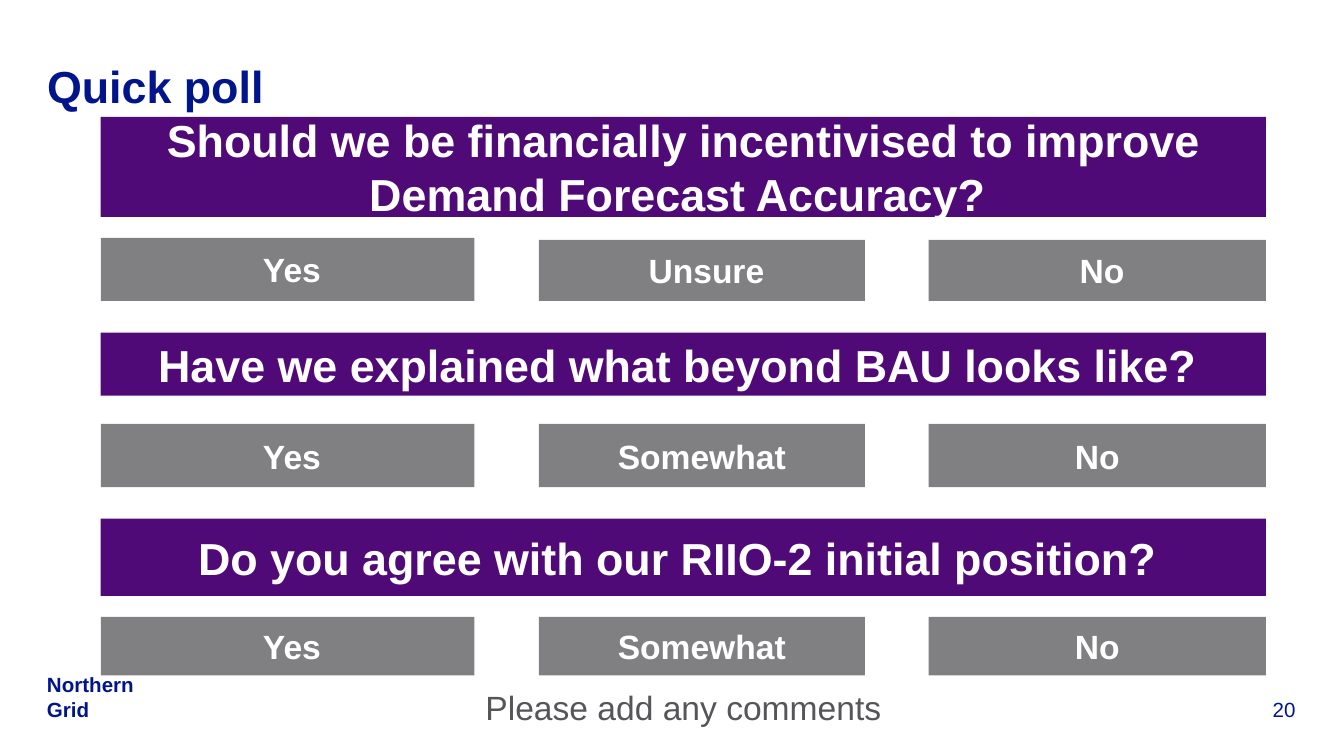
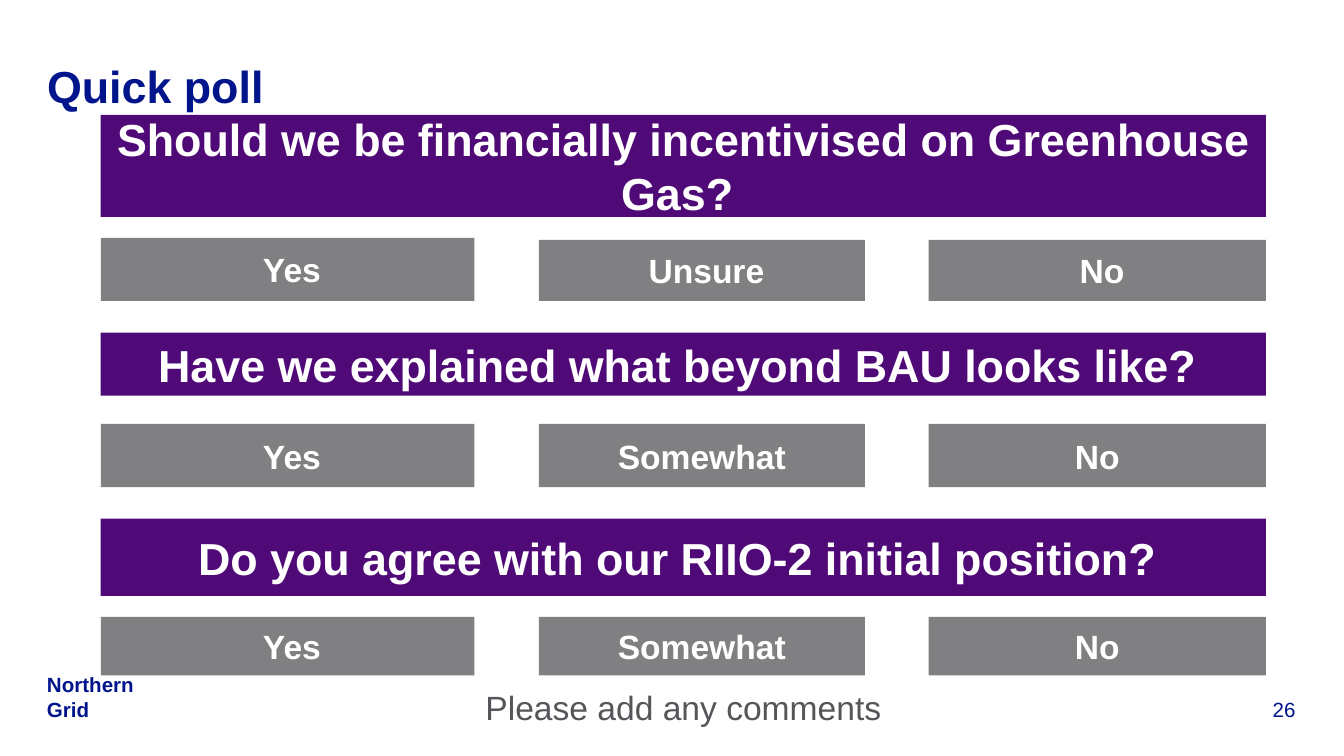
"""Build two quick-poll slides with three questions each."""
from dataclasses import dataclass

from pptx import Presentation
from pptx.dml.color import RGBColor
from pptx.enum.shapes import MSO_SHAPE as Preset
from pptx.enum.text import MSO_ANCHOR as Anchor
from pptx.enum.text import MSO_AUTO_SIZE as AutoSize
from pptx.enum.text import PP_ALIGN as Align
from pptx.slide import Slide
from pptx.text.text import TextFrame
from pptx.util import Emu, Pt

NAVY = RGBColor(0x00, 0x14, 0x8C)
PURPLE = RGBColor(0x50, 0x0A, 0x78)
GREY = RGBColor(0x80, 0x80, 0x83)
DARK_GREY = RGBColor(0x55, 0x55, 0x5A)
WHITE = RGBColor(0xFF, 0xFF, 0xFF)
FONT = "Arial"

EMU_PER_PX = 4572
PAGE_WIDTH, PAGE_HEIGHT = 2000, 1125
MARGIN = 70
BAND_LEFT, BAND_WIDTH = 150, 1734
ANSWER_COLUMNS = ((150, 556), (802, 485), (1382, 502))


@dataclass(frozen=True)
class Area:
    left: int
    top: int
    width: int
    height: int

    def emu(self) -> tuple[Emu, ...]:
        return tuple(Emu(px * EMU_PER_PX)
                     for px in (self.left, self.top, self.width, self.height))


@dataclass(frozen=True)
class Question:
    text: str
    top: int
    height: int
    answers: tuple[str, str, str]
    answer_top: int
    answer_height: int
    later_drop: int = 0


@dataclass(frozen=True)
class Poll:
    number: int
    opening: Question


OPENING_ANSWERS = (" Yes", " Unsure", " No")
USUAL_ANSWERS = (" Yes", "Somewhat", "No")

COMMON_QUESTIONS = (
    Question("Have we explained what beyond BAU looks like? ",
             495, 94, USUAL_ANSWERS, 631, 94),
    Question("Do you agree with our RIIO-2 initial position? ",
             772, 115, USUAL_ANSWERS, 918, 87),
)

POLLS = (
    Poll(20, Question(
        "Should we be financially incentivised to improve Demand Forecast Accuracy? ",
        174, 149, OPENING_ANSWERS, 354, 94, later_drop=3)),
    Poll(26, Question(
        "Should we be financially incentivised on Greenhouse Gas? ",
        171, 152, OPENING_ANSWERS, 354, 94, later_drop=3)),
)


def write(frame: TextFrame, text: str, *, size: int, color: RGBColor,
          bold: bool = False, align: Align = Align.LEFT,
          anchor: Anchor = Anchor.MIDDLE, after: int = 0) -> None:
    frame.word_wrap = True
    frame.vertical_anchor = anchor
    para = frame.paragraphs[0]
    para.alignment = align
    para.space_after = Pt(after)
    span = para.add_run()
    span.text = text
    span.font.name = FONT
    span.font.size = Pt(size)
    span.font.bold = bold
    span.font.color.rgb = color


def add_label(page: Slide, area: Area, text: str, *, grow: bool = True,
              **text_format) -> None:
    frame = page.shapes.add_textbox(*area.emu()).text_frame
    frame.margin_left = frame.margin_right = 0
    frame.margin_top = frame.margin_bottom = 0
    frame.auto_size = AutoSize.SHAPE_TO_FIT_TEXT if grow else AutoSize.NONE
    write(frame, text, **text_format)


def add_bar(page: Slide, area: Area, text: str, *, fill: RGBColor, size: int) -> None:
    box = page.shapes.add_shape(Preset.RECTANGLE, *area.emu())
    box.shadow.inherit = False
    box.fill.solid()
    box.fill.fore_color.rgb = fill
    box.line.fill.background()
    write(box.text_frame, text, size=size, color=WHITE, bold=True,
          align=Align.CENTER, after=6)


def add_question(page: Slide, question: Question) -> None:
    add_bar(page, Area(BAND_LEFT, question.top, BAND_WIDTH, question.height),
            question.text, fill=PURPLE, size=24)
    for column, answer in enumerate(question.answers):
        left, width = ANSWER_COLUMNS[column]
        drop = question.later_drop if column else 0
        add_bar(page, Area(left, question.answer_top + drop, width,
                           question.answer_height - drop),
                answer, fill=GREY, size=18)


def add_frame(page: Slide, number: int) -> None:
    add_label(page, Area(1812, 1036, 116, 38), str(number), size=11, color=NAVY,
              align=Align.RIGHT, anchor=Anchor.BOTTOM)
    add_label(page, Area(MARGIN, 1036, 200, 38), "Northern Grid", size=11,
              color=NAVY, bold=True, anchor=Anchor.BOTTOM)
    add_label(page, Area(MARGIN, 80, 1858, 94), "Quick poll", grow=False,
              size=24, color=NAVY, bold=True)


def add_poll(page: Slide, poll: Poll) -> None:
    add_frame(page, poll.number)
    for question in (poll.opening, *COMMON_QUESTIONS):
        add_question(page, question)
    add_label(page, Area(BAND_LEFT, 1022, BAND_WIDTH, 60), "Please add any comments",
              size=18, color=DARK_GREY, align=Align.CENTER, anchor=Anchor.TOP, after=6)


def main() -> None:
    deck = Presentation()
    deck.slide_width = Emu(PAGE_WIDTH * EMU_PER_PX)
    deck.slide_height = Emu(PAGE_HEIGHT * EMU_PER_PX)
    for poll in POLLS:
        add_poll(deck.slides.add_slide(deck.slide_layouts[6]), poll)
    deck.save("out.pptx")


if __name__ == "__main__":
    main()
